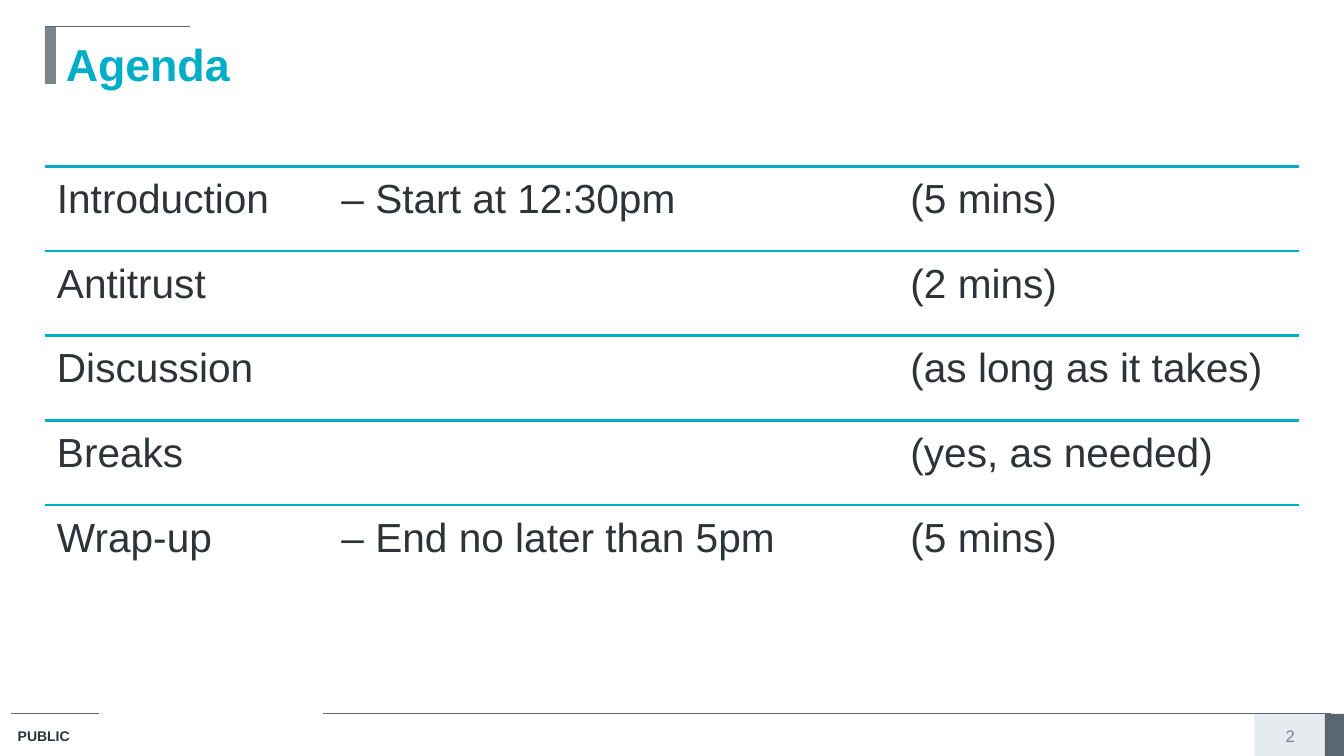
from lxml.etree import SubElement
from pptx import Presentation
from pptx.dml.color import RGBColor
from pptx.enum.shapes import MSO_CONNECTOR, MSO_SHAPE
from pptx.enum.text import MSO_ANCHOR, PP_ALIGN
from pptx.oxml.ns import qn
from pptx.util import Inches, Pt

# Slide grid: 120 columns by 90 rows
WIDTH, HEIGHT = Inches(13.33), Inches(7.5)
COLUMN, ROW = WIDTH / 120, HEIGHT / 90

COLORS = {
    "accent": "00AEC7",
    "ink": "2D3338",
    "slate": "5B6770",
    "gray": "7C858C",
    "pale": "E6EBF0",
}

MARGIN, CONTENT_WIDTH = 4, 112
AGENDA_TOP, AGENDA_STEP = 19.8, 10.08
FOOTER_TOP = 85
TAB_STOPS = (25.4, 76.2)

AGENDA = [
    ("Introduction", "– Start at 12:30pm", "(5 mins)"),
    ("Antitrust", "", "(2 mins)"),
    ("Discussion", "", "(as long as it takes)"),
    ("Breaks", "", "(yes, as needed)"),
    ("Wrap-up", "– End no later than 5pm", "(5 mins)"),
]


def color(name):
    return RGBColor.from_string(COLORS[name])


def place(left, top, width, height):
    return (round(left * COLUMN), round(top * ROW),
            round(width * COLUMN), round(height * ROW))


def add_bar(page, area, fill):
    bar = page.shapes.add_shape(MSO_SHAPE.RECTANGLE, *place(*area))
    bar.shadow.inherit = False
    bar.fill.solid()
    bar.fill.fore_color.rgb = color(fill)
    bar.line.fill.background()


def add_rule(page, left, right, top, stroke="slate", weight=0.75):
    start_x, y, end_x, _ = place(left, top, right, 0)
    rule = page.shapes.add_connector(MSO_CONNECTOR.STRAIGHT, start_x, y, end_x, y)
    rule.line.color.rgb = color(stroke)
    rule.line.width = Pt(weight)
    SubElement(rule._element.spPr, qn("a:effectLst"))


def add_text(page, area, text, size, ink, bold=False, tabs=()):
    box = page.shapes.add_textbox(*place(*area))
    box.text_frame.word_wrap = True
    para = box.text_frame.paragraphs[0]
    para.add_run().text = text
    if tabs:
        tab_list = SubElement(para._p.get_or_add_pPr(), qn("a:tabLst"))
        for stop in tabs:
            SubElement(tab_list, qn("a:tab"), pos=str(round(stop * COLUMN)), algn="l")
    para.font.name = "Arial"
    para.font.size = Pt(size)
    para.font.bold = bold
    para.font.color.rgb = color(ink)
    return box.text_frame


def add_title(page, text):
    add_bar(page, (MARGIN, 3.2, 1, 6.8), "gray")
    add_rule(page, MARGIN, 17, 3.2)
    frame = add_text(page, (5, 3.4, CONTENT_WIDTH, 6.8), text, 32, "accent", bold=True)
    frame.margin_top = round(ROW)
    frame.paragraphs[0].runs[0]._r.get_or_add_rPr().set("spc", "-10")


def add_agenda_item(page, index, item):
    top = AGENDA_TOP + index * AGENDA_STEP
    add_rule(page, MARGIN, MARGIN + CONTENT_WIDTH, top, "accent", 2)
    frame = add_text(page, (MARGIN, top, CONTENT_WIDTH, AGENDA_STEP),
                     "\t".join(item), 29, "ink", tabs=TAB_STOPS)
    frame.margin_left = frame.margin_right = Inches(0.12)
    frame.margin_top = frame.margin_bottom = Inches(0.12)
    frame.paragraphs[0].line_spacing = 0.9


def add_footer(page, label, number):
    add_bar(page, (112, FOOTER_TOP, 7, 5), "pale")
    add_bar(page, (118.3, FOOTER_TOP, 1.7, 5), "slate")
    add_rule(page, 1, 8.8, FOOTER_TOP)
    add_rule(page, 28.8, 118.8, FOOTER_TOP)
    add_text(page, (0.7, 86, 9.3, 3.4), label, 10, "ink", bold=True)
    frame = add_text(page, (112, 86.2, 6.4, 2.9), number, 12, "gray")
    frame.vertical_anchor = MSO_ANCHOR.MIDDLE
    frame.paragraphs[0].alignment = PP_ALIGN.CENTER


def main():
    deck = Presentation()
    deck.slide_width, deck.slide_height = WIDTH, HEIGHT
    page = deck.slides.add_slide(deck.slide_layouts[6])

    # Frame of the slide
    add_footer(page, "PUBLIC", "2")
    add_title(page, "Agenda")

    # Agenda rows
    for index, item in enumerate(AGENDA):
        add_agenda_item(page, index, item)

    deck.save("out.pptx")


if __name__ == "__main__":
    main()
